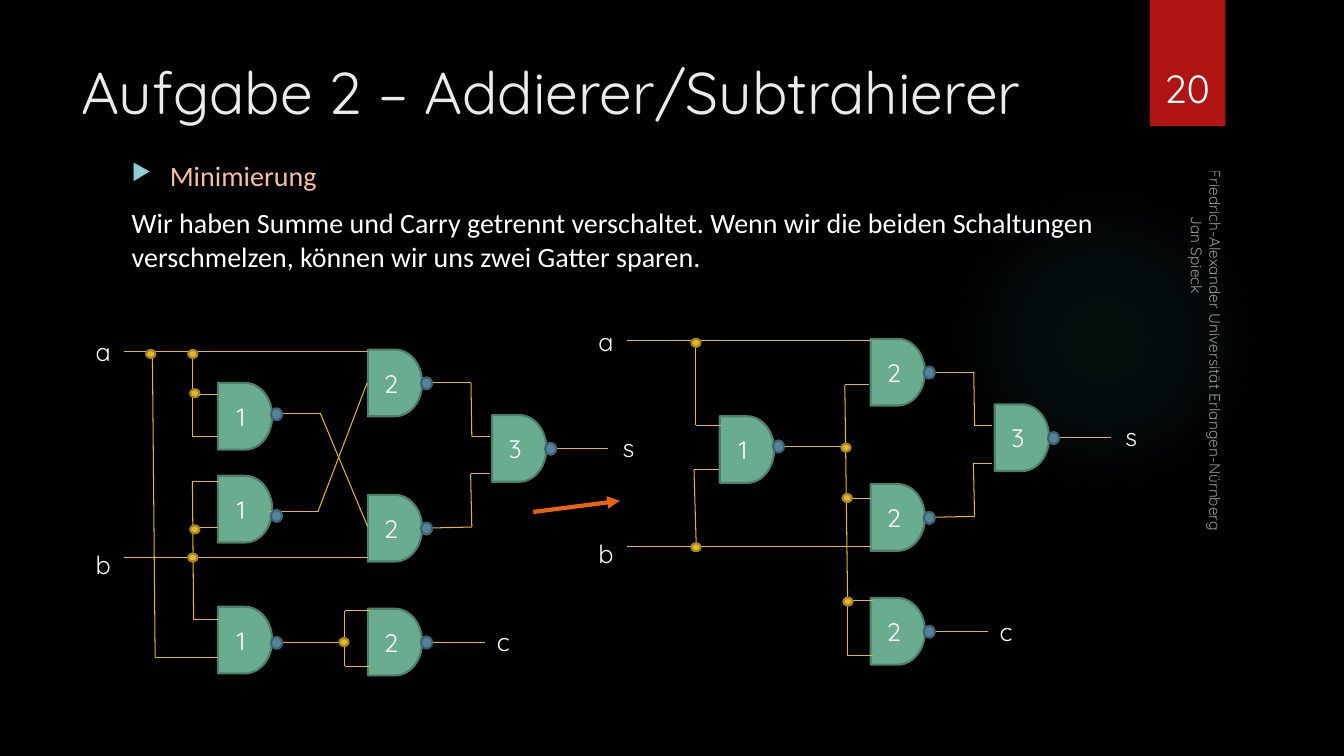
"""Build a slide that compares two half-adder circuits before and after merging gates."""
from itertools import pairwise

from lxml import etree
from pptx import Presentation
from pptx.dml.color import RGBColor
from pptx.enum.shapes import MSO_CONNECTOR, MSO_SHAPE
from pptx.enum.text import MSO_ANCHOR, MSO_AUTO_SIZE, PP_ALIGN
from pptx.oxml import parse_xml
from pptx.oxml.ns import nsdecls, qn
from pptx.util import Cm, Pt

LINE = MSO_CONNECTOR.STRAIGHT
OVAL, RECT, GATE = MSO_SHAPE.OVAL, MSO_SHAPE.RECTANGLE, MSO_SHAPE.FLOWCHART_DELAY
TOP, MIDDLE, BOTTOM = MSO_ANCHOR.TOP, MSO_ANCHOR.MIDDLE, MSO_ANCHOR.BOTTOM
LEFT, CENTER = PP_ALIGN.LEFT, PP_ALIGN.CENTER
GROW, FIXED = MSO_AUTO_SIZE.SHAPE_TO_FIT_TEXT, MSO_AUTO_SIZE.NONE

COLORS = {
    "background": "000000", "title": "EBEBEB", "white": "FFFFFF",
    "heading": "F8C09F", "bullet": "8AD0D6", "banner": "B01513",
    "glow": "50B9C1", "wire": "E6B729", "dot edge": "AA871E",
    "gate": "6AAC90", "gate edge": "4E7F6B",
    "bubble": "54849A", "bubble edge": "3E6272", "arrow": "EA6312",
}
DISPLAY, BODY = "Quicksand", "Calibri"

TITLE = "Aufgabe 2 – Addierer/Subtrahierer"
HEADING = "Minimierung"
EXPLANATION = ("Wir haben Summe und Carry getrennt verschaltet. Wenn wir die beiden "
               "Schaltungen verschmelzen, können wir uns zwei Gatter sparen.")
CREDITS = [("Friedrich-Alexander Universität Erlangen-Nürnberg", 0), ("Jan Spieck", 1.18)]
PAGE = "20"

SHARED = {
    "gates": [("2", 9.27, 8.81, 0.7), ("2", 9.27, 12.47, 0.7),
              ("2", 9.27, 15.34, 0.7), ("3", 12.4, 10.46, 0.7)],
    "labels": [("a", 2.16, 8.36, 0.94), ("b", 2.16, 13.72, 0.94),
               ("s", 15.44, 10.77, 0.76), ("c", 12.27, 15.67, 0.91)],
    "wires": [
        [(3.12, 8.86), (9.27, 8.86)],
        [(3.12, 14.05), (9.27, 14.05)],
        [(10.64, 16.18), (12.22, 16.18)],
        [(13.74, 11.3), (15.32, 11.3)],
        [(10.64, 9.65), (11.87, 9.65), (11.89, 11), (12.34, 11)],
        [(10.64, 13.31), (11.89, 13.28), (11.86, 11.94), (12.34, 11.94)],
        [(9.32, 15.39), (8.69, 15.39), (8.69, 16.79), (9.32, 16.79)],
    ],
    "dots": [],
}
SEPARATE = {
    "gates": [("1", 5.49, 9.65, 0.64), ("1", 5.49, 11.99, 0.86), ("1", 5.49, 15.29, 0.76)],
    "labels": [],
    "wires": [
        [(3.84, 8.86), (3.91, 16.56), (5.49, 16.56)],
        [(4.85, 8.86), (4.85, 11), (5.49, 11)],
        [(4.85, 9.93), (5.49, 9.93)],
        [(5.51, 12.14), (4.85, 12.14), (4.88, 15.62), (5.51, 15.62)],
        [(4.85, 13.28), (5.49, 13.28)],
        [(7.11, 16.18), (8.69, 16.18)],
        [(6.86, 10.41), (8.07, 10.41), (9.27, 13.28)],
        [(6.78, 12.9), (8.01, 12.9), (9.25, 9.65)],
    ],
    "dots": [(4.86, 14.05), (4.91, 13.34), (3.8, 8.92), (4.86, 8.92),
             (4.91, 9.91), (8.67, 16.18)],
}
MERGED = {
    "gates": [("1", 18.14, 10.49, 0.61)],
    "labels": [],
    "wires": [
        [(17.53, 8.61), (17.53, 10.72), (18.16, 10.72)],
        [(17.55, 13.89), (17.49, 11.84), (18.11, 11.84)],
        [(19.61, 11.25), (21.31, 11.25)],
        [(21.36, 15.06), (21.29, 9.7), (21.89, 9.7)],
        [(21.31, 12.55), (21.95, 12.55)],
    ],
    "dots": [(17.54, 13.79), (17.54, 8.64), (21.37, 15.16), (21.35, 12.55), (21.32, 11.28)],
}
CIRCUITS = [(SHARED, 0, 0), (SEPARATE, 0, 0), (SHARED, 12.67, -0.27), (MERGED, 0, 0)]
ARROW = [(13.44, 12.9), (15.62, 12.62)]
GATE_W, GATE_H, BUBBLE_X = 1.37, 1.68, 1.34
BUBBLE_W, BUBBLE_H, DOT_W, DOT_H = 0.28, 0.3, 0.23, 0.2


def rgb(name):
    return RGBColor.from_string(COLORS[name])


def add_run(p, text, size, color="white", font=DISPLAY):
    r = p.add_run()
    r.text = text
    for key, value in {"size": Pt(size), "name": font}.items():
        setattr(r.font, key, value)
    r.font.color.rgb = rgb(color)
    return r


def frame(s, anchor=TOP, wrap=True, size=FIXED):
    tf = s.text_frame
    for key, value in {"auto_size": size, "word_wrap": wrap, "vertical_anchor": anchor}.items():
        setattr(tf, key, value)
    return tf


def add_box(shapes, x, y, w, h, **options):
    s = shapes.add_textbox(Cm(x), Cm(y), Cm(w), Cm(h))
    return s, frame(s, **options)


def add_filled(shapes, kind, x, y, w, h, fill, edge=None):
    s = shapes.add_shape(kind, Cm(x), Cm(y), Cm(w), Cm(h))
    s.shadow.inherit = False
    s.fill.solid()
    s.fill.fore_color.rgb = rgb(fill)
    if edge:
        s.line.color.rgb = rgb(edge)
        s.line.width = Pt(1.5)
    else:
        s.line.fill.background()
    return s


def add_line(shapes, start, end, color="wire", width=0.75):
    s = shapes.add_connector(LINE, *(Cm(v) for v in (*start, *end)))
    s.line.color.rgb = rgb(color)
    s.line.width = Pt(width)
    etree.SubElement(s._element.spPr, qn("a:effectLst"))
    return s


def add_glow(shapes):
    s = add_filled(shapes, OVAL, 23.9, 4.65, 7.82, 7.82, "glow")
    stops = "".join(
        f'<a:gs pos="{pos}000"><a:srgbClr val="{COLORS["glow"]}">'
        f'<a:alpha val="{alpha}000"/></a:srgbClr></a:gs>'
        for pos, alpha in [(0, 7), (36, 6), (69, 0)])
    gradient = parse_xml(
        f'<a:gradFill {nsdecls("a")}><a:gsLst>{stops}</a:gsLst><a:path path="circle">'
        '<a:fillToRect l="50000" t="50000" r="50000" b="50000"/></a:path></a:gradFill>')
    spPr = s._element.spPr
    spPr.replace(spPr.find(qn("a:solidFill")), gradient)


def add_body(shapes):
    _, tf = add_box(shapes, 3.07, 3.86, 24.84, 14.27)
    p = tf.paragraphs[0]
    pPr = p._p.get_or_add_pPr()
    pPr.set("marL", str(Cm(0.96)))
    pPr.set("indent", str(-Cm(0.96)))
    color = etree.SubElement(pPr, qn("a:buClr"))
    etree.SubElement(color, qn("a:srgbClr"), val=COLORS["bullet"])
    etree.SubElement(pPr, qn("a:buSzPct"), val="80000")
    etree.SubElement(pPr, qn("a:buChar"), char="▶")
    add_run(p, HEADING, 20, "heading", BODY)
    p = tf.add_paragraph()
    p.space_before = Pt(10)
    add_run(p, EXPLANATION, 20, "white", BODY)


def add_credits(shapes):
    s, tf = add_box(shapes, 24.87, 8.97, 10.72, 0.84, anchor=BOTTOM)
    s.rotation = 90
    for i, (text, indent) in enumerate(CREDITS):
        p = tf.add_paragraph() if i else tf.paragraphs[0]
        p._p.get_or_add_pPr().set("marL", str(Cm(indent)))
        r = add_run(p, text, 11)
        color = r._r.rPr.find(".//" + qn("a:srgbClr"))
        etree.SubElement(color, qn("a:alpha"), val="60000")


def add_circuit(shapes, circuit, dx, dy):
    for text, x, y, _ in circuit["gates"]:
        s = add_filled(shapes, GATE, x + dx, y + dy, GATE_W, GATE_H, "gate", "gate edge")
        p = frame(s, MIDDLE).paragraphs[0]
        p.alignment = CENTER
        add_run(p, text, 18)
    for text, x, y, w in circuit["labels"]:
        _, tf = add_box(shapes, x + dx, y + dy, w, 1.02, wrap=False, size=GROW)
        add_run(tf.paragraphs[0], text, 18)
    for wire in circuit["wires"]:
        for start, end in pairwise((x + dx, y + dy) for x, y in wire):
            add_line(shapes, start, end)
    for x, y in circuit["dots"]:
        add_filled(shapes, OVAL, x + dx - DOT_W / 2, y + dy - DOT_H / 2, DOT_W, DOT_H,
                   "wire", "dot edge")
    for _, x, y, drop in circuit["gates"]:
        add_filled(shapes, OVAL, x + dx + BUBBLE_X, y + dy + drop, BUBBLE_W, BUBBLE_H,
                   "bubble", "bubble edge")


def main():
    prs = Presentation()
    prs.slide_width, prs.slide_height = Cm(33.87), Cm(19.05)
    slide = prs.slides.add_slide(prs.slide_layouts[5])
    slide.background.fill.solid()
    slide.background.fill.fore_color.rgb = rgb("background")
    shapes = slide.shapes

    add_glow(shapes)
    add_filled(shapes, RECT, 28.98, 0, 1.9, 3.18, "banner")
    title = shapes.title
    for key, value in {"left": 1.8, "top": 1.27, "width": 26.14, "height": 3.89}.items():
        setattr(title, key, Cm(value))
    p = frame(title).paragraphs[0]
    p.alignment = LEFT
    add_run(p, TITLE, 42, "title")
    add_body(shapes)
    add_credits(shapes)
    _, tf = add_box(shapes, 28.75, 0.81, 2.34, 2.13, anchor=BOTTOM)
    tf.paragraphs[0].alignment = CENTER
    add_run(tf.paragraphs[0], PAGE, 28)

    for circuit, dx, dy in CIRCUITS:
        add_circuit(shapes, circuit, dx, dy)
    arrow = add_line(shapes, *ARROW, color="arrow", width=3)
    etree.SubElement(arrow.line._get_or_add_ln(), qn("a:tailEnd"), type="triangle")
    prs.save("out.pptx")


if __name__ == "__main__":
    main()
